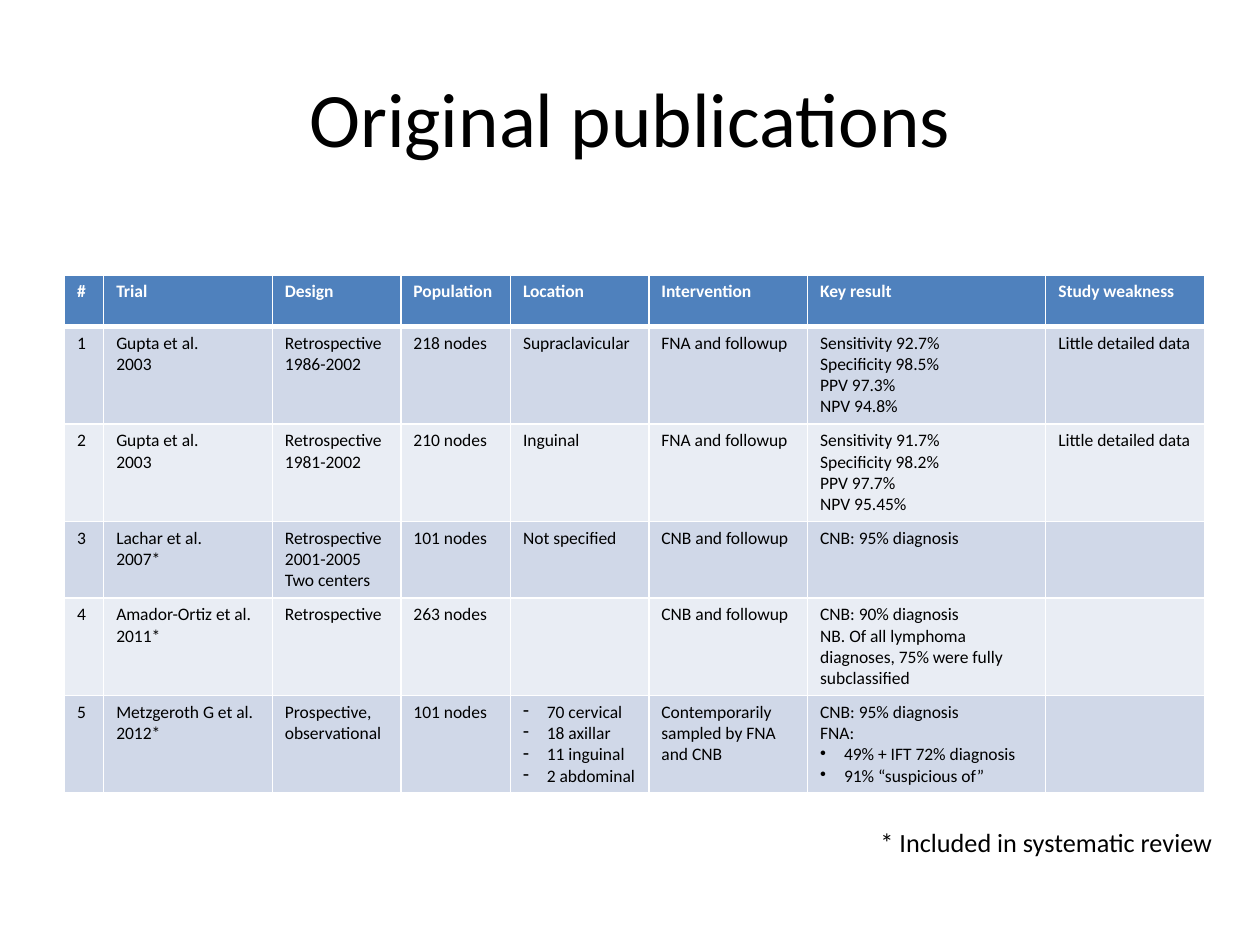
import pptx
import pptx.dml.color
import pptx.enum.text
import pptx.oxml
import pptx.oxml.ns
import pptx.util
from pptx.util import Cm

FONT = "Calibri"
BLACK, WHITE = "000000", "FFFFFF"
HEADER_FILL = "4F81BD"
BAND_FILLS = ("D0D8E8", "E9EDF4")
BULLETS = ("-", "•")
BULLET_INDENT = Cm(0.48)

COLUMN_WIDTHS = (0.79, 3.4, 2.59, 2.21, 2.79, 3.2, 4.8, 3.2)
ROW_HEIGHT = 1.04

# Lines within a cell are separated by \n; "- " or "• " starts a list item
HEADERS = ("#", "Trial", "Design", "Population", "Location", "Intervention",
           "Key result", "Study weakness")
STUDIES = (
    ("1", "Gupta et al.\n2003", "Retrospective\n1986-2002", "218 nodes",
     "Supraclavicular", "FNA and followup",
     "Sensitivity 92.7%\nSpecificity 98.5%\nPPV 97.3%\nNPV 94.8%",
     "Little detailed data"),
    ("2", "Gupta et al.\n2003", "Retrospective\n1981-2002", "210 nodes",
     "Inguinal", "FNA and followup",
     "Sensitivity 91.7%\nSpecificity 98.2%\nPPV 97.7%\nNPV 95.45%",
     "Little detailed data"),
    ("3", "Lachar et al.\n2007*", "Retrospective\n2001-2005\nTwo centers",
     "101 nodes", "Not specified", "CNB and followup",
     "CNB: 95% diagnosis", ""),
    ("4", "Amador-Ortiz et al. 2011*", "Retrospective", "263 nodes", "",
     "CNB and followup",
     "CNB: 90% diagnosis\nNB. Of all lymphoma diagnoses, 75% were fully "
     "subclassified", ""),
    ("5", "Metzgeroth G et al.\n2012*", "Prospective, observational",
     "101 nodes", "- 70 cervical\n- 18 axillar\n- 11 inguinal\n- 2 abdominal",
     "Contemporarily sampled by FNA and CNB",
     "CNB: 95% diagnosis\nFNA:\n• 49% + IFT 72% diagnosis\n"
     "• 91% “suspicious of”", ""),
)


def color(hex_string):
    return pptx.dml.color.RGBColor.from_string(hex_string)


def format_font(font, size, hex_string, bold=False):
    values = {"name": FONT, "size": pptx.util.Pt(size), "bold": bold}
    for name, value in values.items():
        setattr(font, name, value)
    font.color.rgb = color(hex_string)


def add_bullet(paragraph, character):
    properties = paragraph._p.get_or_add_pPr()
    properties.set("marL", str(BULLET_INDENT))
    properties.set("indent", str(-BULLET_INDENT))
    bullet = pptx.oxml.parse_xml(
        f'<a:buChar {pptx.oxml.ns.nsdecls("a")} char="{character}"/>')
    properties.insert(0, bullet)


def add_border(cell, side, width):
    line = pptx.oxml.parse_xml(
        f'<a:ln{side} {pptx.oxml.ns.nsdecls("a")} w="{pptx.util.Pt(width)}">'
        f'<a:solidFill><a:srgbClr val="{WHITE}"/></a:solidFill></a:ln{side}>')
    cell._tc.get_or_add_tcPr().append(line)


def fill_cell(cell, text, row_index):
    is_header = row_index == 0
    # Borders come before the fill in the cell properties
    for side in "LRTB":
        heavy = (is_header and side == "B") or (row_index == 1 and side == "T")
        add_border(cell, side, 3 if heavy else 1)
    cell.fill.solid()
    cell.fill.fore_color.rgb = color(
        HEADER_FILL if is_header else BAND_FILLS[(row_index - 1) % 2])

    frame = cell.text_frame
    for index, line in enumerate(text.split("\n")):
        paragraph = frame.add_paragraph() if index else frame.paragraphs[0]
        marker, _, item = line.partition(" ")
        is_item = marker in BULLETS
        if is_item:
            add_bullet(paragraph, marker)
        if line:
            run = paragraph.add_run()
            run.text = item if is_item else line
            format_font(run.font, 10, WHITE if is_header else BLACK, is_header)


def place(shape, box):
    for name, value in zip(("left", "top", "width", "height"), box):
        setattr(shape, name, Cm(value))


def set_title(slide, box):
    title = slide.shapes.title
    place(title, box)
    title.text_frame.text = "Original publications"
    title.text_frame.vertical_anchor = pptx.enum.text.MSO_ANCHOR.MIDDLE
    paragraph = title.text_frame.paragraphs[0]
    paragraph.alignment = pptx.enum.text.PP_ALIGN.CENTER
    format_font(paragraph.runs[0].font, 44, BLACK)


def add_study_table(slide, left, top):
    rows = (HEADERS, *STUDIES)
    table = slide.shapes.add_table(
        len(rows), len(HEADERS), Cm(left), Cm(top),
        Cm(sum(COLUMN_WIDTHS)), Cm(ROW_HEIGHT * len(rows))).table
    for column, width in zip(table.columns, COLUMN_WIDTHS):
        column.width = Cm(width)
    for row_index, texts in enumerate(rows):
        table.rows[row_index].height = Cm(ROW_HEIGHT)
        for column_index, text in enumerate(texts):
            fill_cell(table.cell(row_index, column_index), text, row_index)


def add_footnote(slide, box):
    frame = slide.shapes.add_textbox(*map(Cm, box)).text_frame
    frame.word_wrap = False
    frame.auto_size = pptx.enum.text.MSO_AUTO_SIZE.SHAPE_TO_FIT_TEXT
    run = frame.paragraphs[0].add_run()
    run.text = "* Included in systematic review"
    format_font(run.font, 15, BLACK)


def main():
    presentation = pptx.Presentation()
    presentation.slide_width, presentation.slide_height = Cm(25.4), Cm(19.05)
    slide = presentation.slides.add_slide(presentation.slide_layouts[5])
    set_title(slide, (1.27, 0.76, 22.86, 3.18))
    add_study_table(slide, 1.3, 5.54)
    add_footnote(slide, (17.5, 16.54, 7.29, 0.89))
    presentation.save("out.pptx")


if __name__ == "__main__":
    main()
